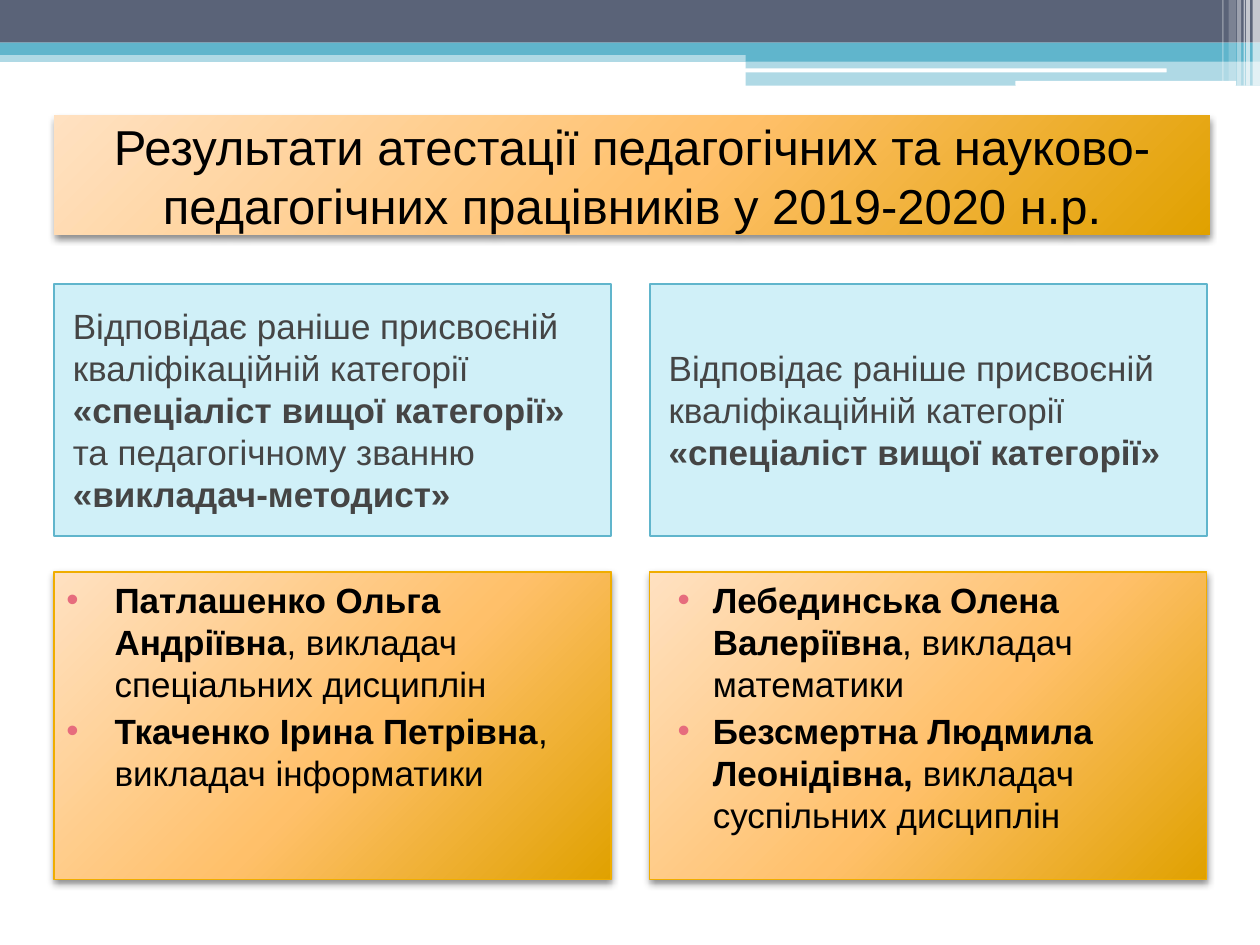
from dataclasses import dataclass
from typing import NamedTuple

from lxml.etree import SubElement
from pptx import Presentation
from pptx.dml.color import RGBColor
from pptx.enum.shapes import MSO_SHAPE
from pptx.enum.text import MSO_ANCHOR, MSO_AUTO_SIZE, PP_ALIGN
from pptx.oxml.ns import qn
from pptx.util import Cm, Pt

COLORS = {
    "slate": "5A6378", "teal": "60B5CC", "white": "FFFFFF", "sky": "45C4E7",
    "gold": "F0AD00", "pink": "E66C7D", "grey": "454545", "black": "000000",
    "peach": "FFE1C1", "orange": "FFC06A", "amber": "E0A100",
}
FONT = "Arial"
GRADIENT = ((0, "peach"), (55, "orange"), (100, "amber"))


class Bar(NamedTuple):
    x: float
    y: float
    w: float
    h: float
    color: str
    alpha: int = 100
    shape: MSO_SHAPE = MSO_SHAPE.RECTANGLE


class Span(NamedTuple):
    text: str
    bold: bool = False


@dataclass
class Column:
    category: list[Span]
    people: list[list[Span]]
    indent: float
    hanging: float


ROUND = MSO_SHAPE.ROUNDED_RECTANGLE
BARS = [
    Bar(0, 1.02, 25.4, 0.23, "teal", 50),
    Bar(0, 0, 25.4, 0.86, "slate"),
    Bar(0, 0.86, 25.4, 0.25, "teal"),
    Bar(15.03, 0.99, 10.37, 0.25, "teal"),
    Bar(15.03, 1.23, 10.37, 0.5, "teal", 50),
    Bar(15.02, 1.38, 8.5, 0.08, "white", shape=ROUND),
    Bar(20.47, 1.63, 4.45, 0.1, "white", shape=ROUND),
    Bar(25.25, 0, 0.15, 1.73, "white", 65),
    Bar(25.12, 0, 0.08, 1.73, "white", 65),
    Bar(25.07, 0, 0.03, 1.73, "white", 60),
    Bar(24.94, 0, 0.08, 1.73, "white", 40),
    Bar(24.77, 0, 0.15, 1.63, "white", 20),
    Bar(24.64, 0, 0.03, 1.63, "white", 30),
]

TITLE = ("Результати атестації педагогічних та "
         "науково-педагогічних працівників у 2019-2020 н.р.")
CATEGORY = [Span("Відповідає раніше присвоєній кваліфікаційній категорії "),
            Span("«спеціаліст вищої категорії»", True)]
COLUMNS = [
    Column(
        CATEGORY + [Span(" та педагогічному званню "),
                    Span("«викладач-методист»", True)],
        [[Span("Патлашенко Ольга Андріївна", True),
          Span(", викладач спеціальних дисциплін")],
         [Span("Ткаченко Ірина Петрівна", True),
          Span(", викладач інформатики")]],
        0.97, 0.97),
    Column(
        CATEGORY,
        [[Span("Лебединська Олена Валеріївна", True),
          Span(", викладач математики")],
         [Span("Безсмертна Людмила Леонідівна,", True),
          Span(" викладач суспільних дисциплін")]],
        1.02, 0.71),
]
LEFT, STEP, WIDTH = 1.09, 12.01, 11.23


def rgb(name: str) -> RGBColor:
    return RGBColor.from_string(COLORS[name])


def add_color(parent, name: str, alpha: int = 100) -> None:
    clr = SubElement(parent, qn("a:srgbClr"), val=COLORS[name])
    if alpha < 100:
        SubElement(clr, qn("a:alpha"), val=str(alpha * 1000))


def fill_solid(sp, name: str, alpha: int = 100) -> None:
    sp.fill.solid()
    fill = sp._element.spPr.find(qn("a:solidFill"))
    fill.clear()
    add_color(fill, name, alpha)


def fill_gold(sp) -> None:
    """Radial gold gradient with a soft shadow below."""
    sp.fill.gradient()
    grad = sp._element.spPr.find(qn("a:gradFill"))
    grad.clear()
    stops = SubElement(grad, qn("a:gsLst"))
    for pos, name in GRADIENT:
        add_color(SubElement(stops, qn("a:gs"), pos=str(pos * 1000)), name)
    ring = SubElement(grad, qn("a:path"), path="circle")
    SubElement(ring, qn("a:fillToRect"),
               l="-40000", t="-90000", r="140000", b="190000")
    sp.shadow.inherit = False
    effects = sp._element.spPr.find(qn("a:effectLst"))
    shadow = SubElement(effects, qn("a:outerShdw"), blurRad=str(Pt(4)),
                        dist=str(Pt(2)), dir="5400000", rotWithShape="0")
    add_color(shadow, "black", 45)


def add_box(s, x: float, y: float, w: float, h: float,
            shape: MSO_SHAPE = MSO_SHAPE.RECTANGLE):
    sp = s.shapes.add_shape(shape, Cm(x), Cm(y), Cm(w), Cm(h))
    sp.shadow.inherit = False
    sp.line.fill.background()
    return sp


def set_line(sp, name: str, width: float) -> None:
    sp.line.color.rgb = rgb(name)
    sp.line.width = Pt(width)


def add_run(p, span: Span, size: int, color: str) -> None:
    r = p.add_run()
    r.text = span.text
    r.font.name, r.font.size, r.font.bold = FONT, Pt(size), span.bold
    r.font.color.rgb = rgb(color)


def write(sp, paragraphs: list[list[Span]], color: str, anchor: MSO_ANCHOR,
          indent: float, hanging: float = 0) -> None:
    tf = sp.text_frame
    tf.word_wrap, tf.vertical_anchor = True, anchor
    for i, spans in enumerate(paragraphs):
        p = tf.add_paragraph() if i else tf.paragraphs[0]
        p.alignment, p.space_before = PP_ALIGN.LEFT, Pt(3)
        pPr = p._p.get_or_add_pPr()
        pPr.set("marL", str(Cm(indent)))
        pPr.set("indent", str(-Cm(hanging)))
        if hanging:
            add_color(SubElement(pPr, qn("a:buClr")), "pink")
            SubElement(pPr, qn("a:buFont"), typeface=FONT)
            SubElement(pPr, qn("a:buChar"), char="•")
        for span in spans:
            add_run(p, span, 20, color)


def add_title(s) -> None:
    sp = s.shapes.title
    sp.left, sp.top, sp.width, sp.height = Cm(1.09), Cm(2.33), Cm(23.3), Cm(2.4)
    fill_gold(sp)
    tf = sp.text_frame
    tf.word_wrap, tf.auto_size = True, MSO_AUTO_SIZE.NONE
    tf.vertical_anchor = MSO_ANCHOR.MIDDLE
    p = tf.paragraphs[0]
    p.alignment = PP_ALIGN.CENTER
    add_run(p, Span(TITLE), 28, "black")


def add_column(s, col: Column, x: float) -> None:
    head = add_box(s, x, 5.72, WIDTH, 5.08)
    fill_solid(head, "sky", 25)
    set_line(head, "teal", 1)
    write(head, [col.category], "grey", MSO_ANCHOR.MIDDLE, 0.13)

    card = add_box(s, x, 11.53, WIDTH, 6.2)
    fill_gold(card)
    set_line(card, "gold", 0.75)
    write(card, col.people, "black", MSO_ANCHOR.TOP, col.indent, col.hanging)


def main() -> None:
    prs = Presentation()
    prs.slide_width, prs.slide_height = Cm(25.4), Cm(19.05)
    s = prs.slides.add_slide(prs.slide_layouts[5])

    # Header band
    for bar in BARS:
        sp = add_box(s, bar.x, bar.y, bar.w, bar.h, bar.shape)
        fill_solid(sp, bar.color, bar.alpha)

    # Title and the two columns
    add_title(s)
    for i, col in enumerate(COLUMNS):
        add_column(s, col, LEFT + i * STEP)

    prs.save("out.pptx")


if __name__ == "__main__":
    main()
